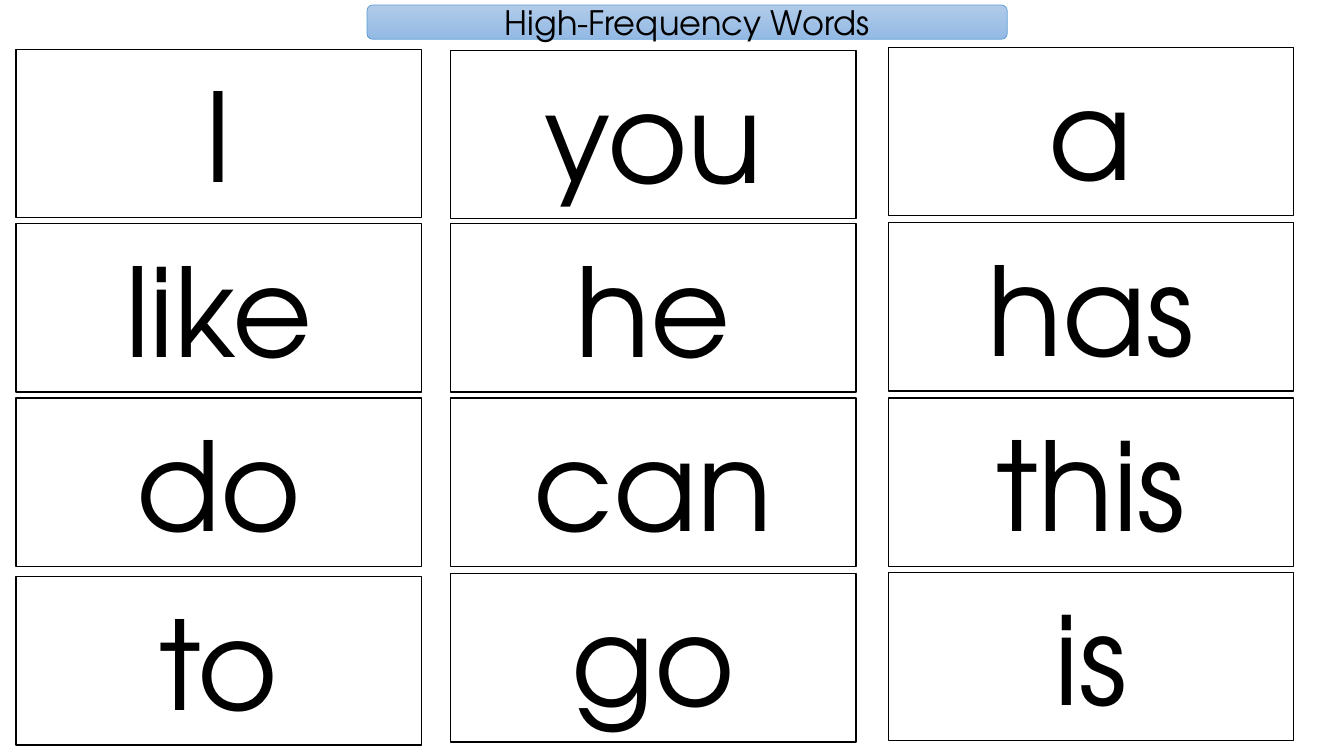
from dataclasses import dataclass

from pptx import Presentation
from pptx.dml.color import RGBColor
from pptx.enum.shapes import MSO_SHAPE
from pptx.enum.text import MSO_ANCHOR, PP_ALIGN
from pptx.shapes.autoshape import Shape
from pptx.slide import Slide
from pptx.util import Inches, Pt

RECTANGLE = MSO_SHAPE.RECTANGLE
ROUNDED = MSO_SHAPE.ROUNDED_RECTANGLE
MIDDLE = MSO_ANCHOR.MIDDLE
CENTER = PP_ALIGN.CENTER

BLACK = RGBColor(0x00, 0x00, 0x00)
WHITE = RGBColor(0xFF, 0xFF, 0xFF)
BANNER_EDGE = RGBColor(0x5B, 0x9B, 0xD5)
BANNER_LIGHT = RGBColor(0xB1, 0xCB, 0xE9)
BANNER_DARK = RGBColor(0x93, 0xB9, 0xE4)

FONT = "TeX Gyre Adventor"
CARD_WIDTH = 4.02
CARD_HEIGHT = 1.67


@dataclass(frozen=True)
class WordColumn:
    left: float
    tops: tuple[float, ...]
    words: tuple[str, ...]


WORD_COLUMNS = (
    WordColumn(0.16, (0.49, 2.22, 3.95, 5.72), ("I", "like", "do", "to")),
    WordColumn(4.47, (0.5, 2.22, 3.95, 5.69), ("you", "he", "can", "go")),
    WordColumn(8.81, (0.47, 2.21, 3.95, 5.68), ("a", "has", "this", "is")),
)


def write_text(shape: Shape, text: str, *, size: float, color: RGBColor = BLACK) -> None:
    frame = shape.text_frame
    frame.word_wrap = True
    frame.vertical_anchor = MIDDLE
    paragraph = frame.paragraphs[0]
    paragraph.alignment = CENTER
    run = paragraph.add_run()
    run.text = text
    run.font.name = FONT
    run.font.size = Pt(size)
    run.font.color.rgb = color


def add_box(slide: Slide, kind: MSO_SHAPE, left: float, top: float, width: float,
            height: float, *, edge: RGBColor, edge_width: float) -> Shape:
    box = slide.shapes.add_shape(
        kind, Inches(left), Inches(top), Inches(width), Inches(height))
    box.shadow.inherit = False
    box.line.color.rgb = edge
    box.line.width = Pt(edge_width)
    return box


def add_banner(slide: Slide, title: str) -> None:
    banner = add_box(slide, ROUNDED, 3.64, 0.05, 6.35, 0.34,
                     edge=BANNER_EDGE, edge_width=0.5)
    banner.fill.gradient()
    banner.fill.gradient_angle = 270
    for stop, color in zip(banner.fill.gradient_stops, (BANNER_LIGHT, BANNER_DARK)):
        stop.color.rgb = color
    write_text(banner, title, size=24)


def add_word_column(slide: Slide, column: WordColumn) -> None:
    for top, word in zip(column.tops, column.words):
        card = add_box(slide, RECTANGLE, column.left, top, CARD_WIDTH, CARD_HEIGHT,
                       edge=BLACK, edge_width=1)
        card.fill.solid()
        card.fill.fore_color.rgb = WHITE
        write_text(card, word, size=88)


def main() -> None:
    presentation = Presentation()
    presentation.slide_width = Inches(13.33)
    presentation.slide_height = Inches(7.5)
    slide = presentation.slides.add_slide(presentation.slide_layouts[6])
    add_banner(slide, "High-Frequency Words")
    for column in WORD_COLUMNS:
        add_word_column(slide, column)
    presentation.save("out.pptx")


if __name__ == "__main__":
    main()
